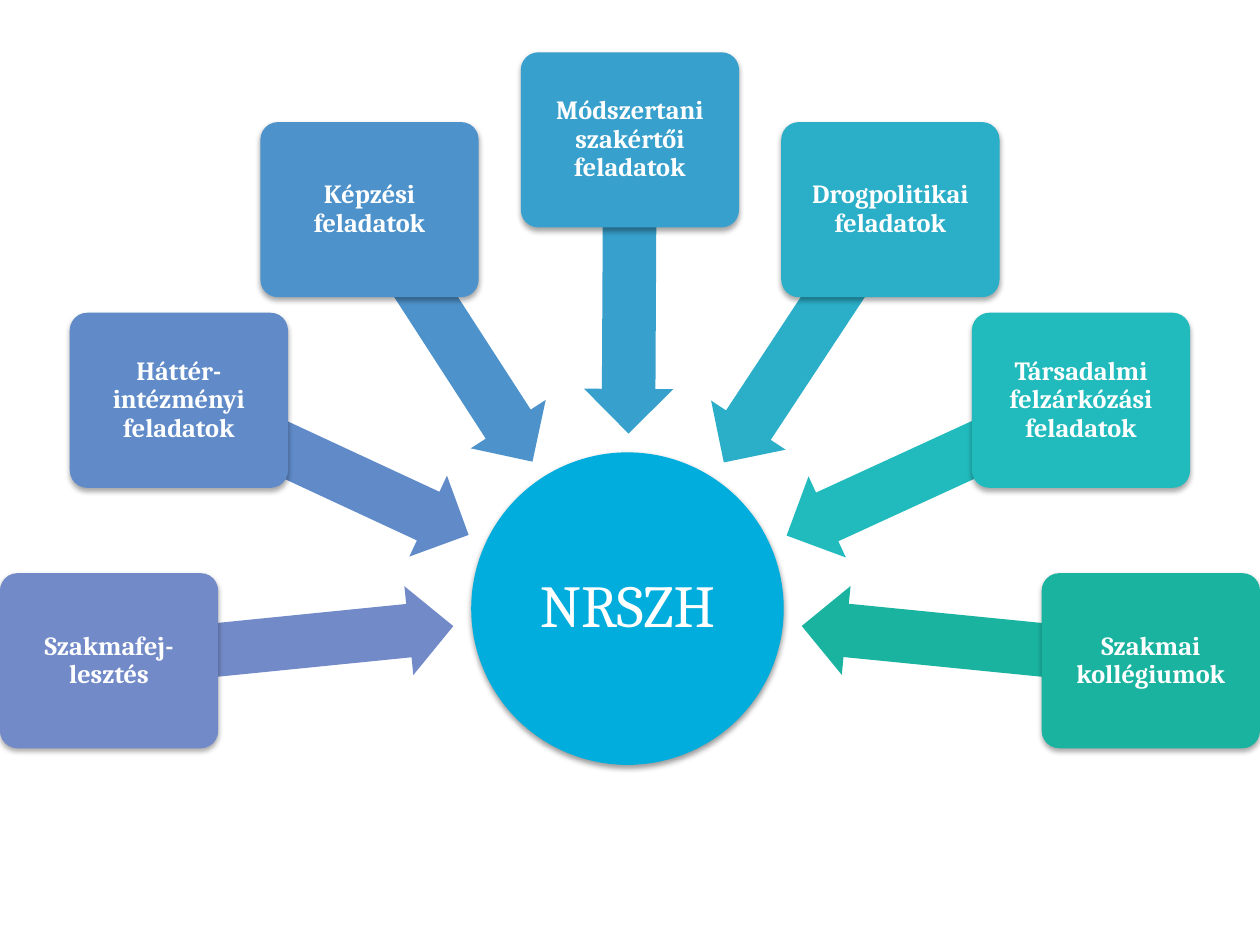
import math

import lxml.etree
import pptx
import pptx.dml.color
import pptx.enum.shapes
import pptx.enum.text
import pptx.oxml.ns
import pptx.util

Cm = pptx.util.Cm
Pt = pptx.util.Pt
RGBColor = pptx.dml.color.RGBColor
SHAPES = pptx.enum.shapes.MSO_SHAPE
qn = pptx.oxml.ns.qn

WHITE = RGBColor(0xFF, 0xFF, 0xFF)
BLACK = RGBColor(0x00, 0x00, 0x00)
HUB_BLUE = RGBColor(0x00, 0xAD, 0xDC)
PERIWINKLE = RGBColor(0x73, 0x8A, 0xC8)
CORNFLOWER = RGBColor(0x60, 0x8B, 0xC8)
STEEL_BLUE = RGBColor(0x4D, 0x92, 0xCA)
SKY_BLUE = RGBColor(0x38, 0xA0, 0xCC)
CYAN = RGBColor(0x2B, 0xAE, 0xC7)
TURQUOISE = RGBColor(0x22, 0xBB, 0xBD)
GREEN = RGBColor(0x1A, 0xB3, 0x9F)

TASKS = [
    ("Szakmafej-lesztés", PERIWINKLE),
    ("Háttér-intézményi feladatok", CORNFLOWER),
    ("Képzési feladatok", STEEL_BLUE),
    ("Módszertani szakértői feladatok", SKY_BLUE),
    ("Drogpolitikai feladatok", CYAN),
    ("Társadalmi felzárkózási feladatok", TURQUOISE),
    ("Szakmai kollégiumok", GREEN),
]

HUB_X, HUB_Y, HUB_SIZE = 12.65, 12.27, 6.3
ARC_X, ARC_Y, ARC_RADIUS = 12.7, 13.32, 10.5
BOX_WIDTH, BOX_HEIGHT = 4.4, 3.53
ARROW_HEIGHT, TIP_DISTANCE = 1.8, 3.53


def apply_format(target, values):
    for name, value in values.items():
        setattr(target, name, value)


class RadialDiagram:
    font_name = "Cambria"
    text_color = WHITE

    def __init__(self, slide):
        self.slide = slide

    def add_shape(self, kind, center_x, center_y, width, height, color):
        shape = self.slide.shapes.add_shape(
            kind,
            Cm(center_x - width / 2),
            Cm(center_y - height / 2),
            Cm(width),
            Cm(height),
        )
        shape.fill.solid()
        shape.fill.fore_color.rgb = color
        shape.line.fill.background()
        shape.shadow.inherit = False
        return shape

    def add_shadow(self, shape, distance, opacity):
        effects = shape._element.spPr.find(qn("a:effectLst"))
        shadow = lxml.etree.SubElement(
            effects,
            qn("a:outerShdw"),
            blurRad="40000",
            dist=str(distance),
            dir="5400000",
            rotWithShape="0",
        )
        color = lxml.etree.SubElement(shadow, qn("a:srgbClr"), val=str(BLACK))
        lxml.etree.SubElement(color, qn("a:alpha"), val=str(opacity * 1000))

    def add_label(self, shape, text, size, bold, inset):
        frame = shape.text_frame
        margins = ("margin_left", "margin_top", "margin_right", "margin_bottom")
        apply_format(frame, dict.fromkeys(margins, Cm(inset)))
        apply_format(frame, {
            "word_wrap": True,
            "vertical_anchor": pptx.enum.text.MSO_ANCHOR.MIDDLE,
        })
        paragraph = frame.paragraphs[0]
        apply_format(paragraph, {
            "alignment": pptx.enum.text.PP_ALIGN.CENTER,
            "line_spacing": 0.9,
        })
        run = paragraph.add_run()
        run.text = text
        apply_format(run.font, {"name": self.font_name, "size": Pt(size), "bold": bold})
        run.font.color.rgb = self.text_color

    def add_hub(self, text):
        hub = self.add_shape(SHAPES.OVAL, HUB_X, HUB_Y, HUB_SIZE, HUB_SIZE, HUB_BLUE)
        self.add_shadow(hub, distance=20000, opacity=38)
        self.add_label(hub, text, size=34, bold=False, inset=0.05)

    def add_arrow(self, box_x, box_y, color):
        angle = math.atan2(box_y - HUB_Y, box_x - HUB_X)
        reach = math.hypot(box_x - HUB_X, box_y - HUB_Y)
        middle = (reach + TIP_DISTANCE) / 2
        arrow = self.add_shape(
            SHAPES.LEFT_ARROW,
            HUB_X + middle * math.cos(angle),
            HUB_Y + middle * math.sin(angle),
            reach - TIP_DISTANCE,
            ARROW_HEIGHT,
            color,
        )
        arrow.rotation = math.degrees(angle) % 360
        arrow.adjustments[0] = 0.6
        arrow.adjustments[1] = 0.5

    def add_box(self, center_x, center_y, text, color):
        box = self.add_shape(
            SHAPES.ROUNDED_RECTANGLE, center_x, center_y, BOX_WIDTH, BOX_HEIGHT, color
        )
        box.adjustments[0] = 0.1
        self.add_shadow(box, distance=23000, opacity=35)
        self.add_label(box, text, size=15, bold=True, inset=0.08)


def main():
    presentation = pptx.Presentation()
    apply_format(presentation, {"slide_width": Cm(25.4), "slide_height": Cm(19.05)})
    slide = presentation.slides.add_slide(presentation.slide_layouts[6])
    diagram = RadialDiagram(slide)
    diagram.add_hub("NRSZH")
    for index, (text, color) in enumerate(TASKS):
        angle = math.pi * (1 - index / (len(TASKS) - 1))
        box_x = ARC_X + ARC_RADIUS * math.cos(angle)
        box_y = ARC_Y - ARC_RADIUS * math.sin(angle)
        diagram.add_arrow(box_x, box_y, color)
        diagram.add_box(box_x, box_y, text, color)
    presentation.save("out.pptx")


if __name__ == "__main__":
    main()
